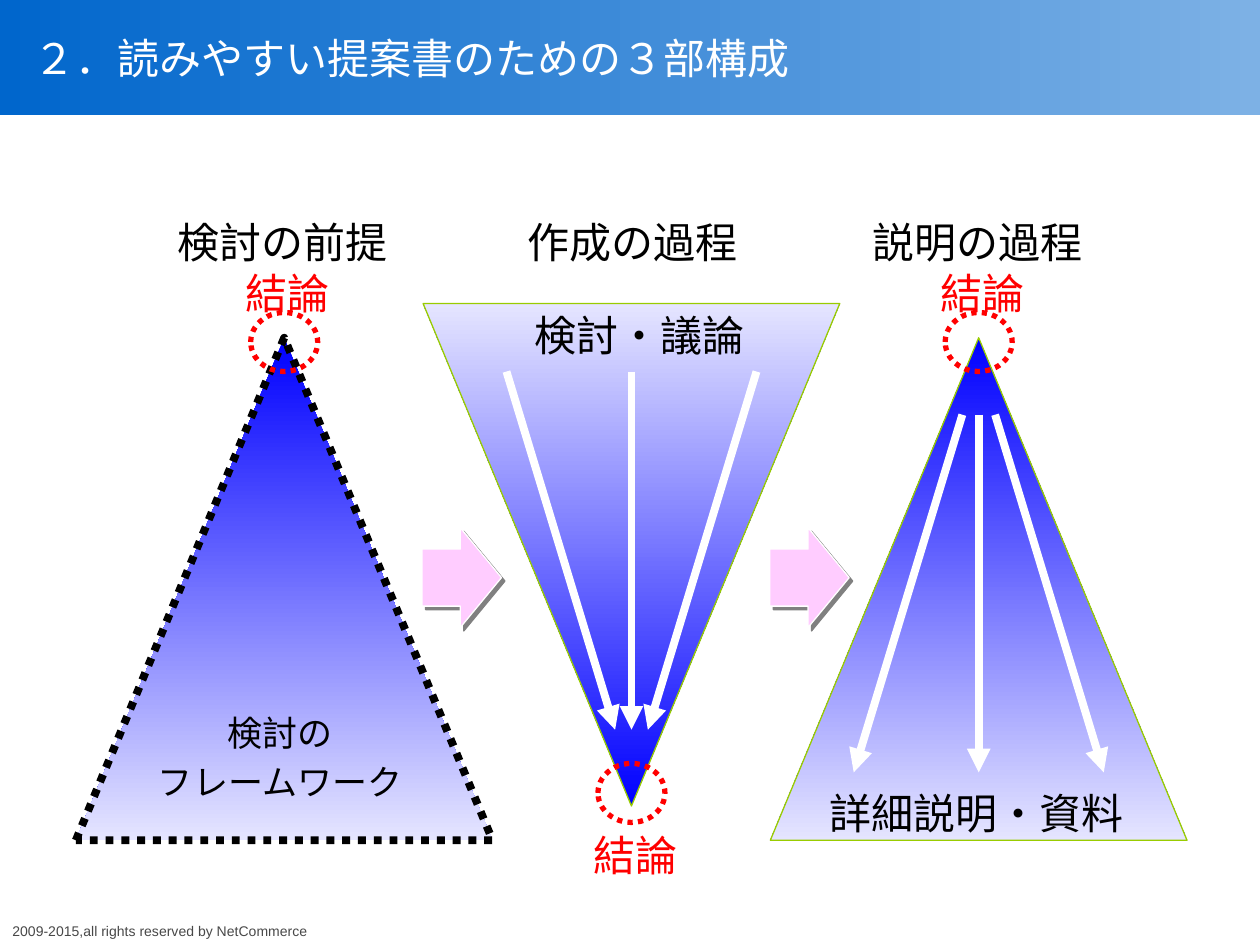
from lxml import etree
from pptx import Presentation
from pptx.dml.color import RGBColor
from pptx.enum import dml, shapes, text
from pptx.oxml import ns
from pptx.util import Cm, Pt

LABEL_FONT = "TeX Gyre Adventor"
CENTRES = (5.73, 12.73, 19.73)
TRIANGLE_WIDTH, TRIANGLE_HEIGHT = 8.4, 10.13
CIRCLE_WIDTH, CIRCLE_HEIGHT = 1.35, 1.19
LABEL_HEIGHT = 1.27


def color(value):
    return RGBColor.from_string(value)


def add_xml(parent, tag, **attributes):
    element = etree.SubElement(parent, ns.qn(tag))
    for name, value in attributes.items():
        element.set(name, str(value))
    return element


def set_line(shape, value, width, dash=None):
    shape.line.color.rgb = color(value)
    shape.line.width = Pt(width)
    if dash:
        shape.line.dash_style = dash


def set_gradient(shape, start, end, angle):
    shape.fill.gradient()
    shape.fill.gradient_angle = angle
    for stop, value in zip(shape.fill.gradient_stops, (start, end)):
        stop.color.rgb = color(value)


def format_font(paragraph, name, size, value):
    formats = {"name": name, "size": Pt(size)}
    for key, setting in formats.items():
        setattr(paragraph.font, key, setting)
    paragraph.font.color.rgb = color(value)


def add_preset(parent, kind, left, top, width, height):
    shape = parent.shapes.add_shape(kind, Cm(left), Cm(top), Cm(width), Cm(height))
    shape.shadow.inherit = False
    return shape


def add_label(parent, lines, left, top, width, height=LABEL_HEIGHT, value="000000",
              size=24, font=LABEL_FONT, align=text.PP_ALIGN.CENTER):
    box = parent.shapes.add_textbox(Cm(left), Cm(top), Cm(width), Cm(height))
    frame = box.text_frame
    frame.word_wrap = False
    frame.auto_size = text.MSO_AUTO_SIZE.SHAPE_TO_FIT_TEXT
    frame.text = "\n".join(lines)
    for index, paragraph in enumerate(frame.paragraphs):
        paragraph.alignment = align
        if index:
            paragraph.space_before = Pt(size * 0.2)
        format_font(paragraph, font, size, value)


def add_triangle(parent, centre, top, inverted=False, outlined=False):
    triangle = add_preset(parent, shapes.MSO_SHAPE.ISOSCELES_TRIANGLE,
                          centre - TRIANGLE_WIDTH / 2, top, TRIANGLE_WIDTH, TRIANGLE_HEIGHT)
    set_gradient(triangle, "0000FF", "E5E5FF", 270)
    if inverted:
        triangle._element.spPr.find(ns.qn("a:xfrm")).set("flipV", "1")
    if outlined:
        set_line(triangle, "000000", 4.5, dml.MSO_LINE.ROUND_DOT)
    else:
        set_line(triangle, "99CC00", 0.75)


def add_conclusion(parent, centre, circle_top, label_top):
    circle = add_preset(parent, shapes.MSO_SHAPE.OVAL, centre - CIRCLE_WIDTH / 2,
                        circle_top, CIRCLE_WIDTH, CIRCLE_HEIGHT)
    circle.fill.background()
    set_line(circle, "FF0000", 3, dml.MSO_LINE.ROUND_DOT)
    add_label(parent, ["結論"], centre - 1.03, label_top, 2.21, value="FF0000")


def add_arrow_fan(parent, centre, top, bottom, top_spread, bottom_spread):
    for side in (0, -1, 1):
        arrow = parent.shapes.add_connector(
            shapes.MSO_CONNECTOR.STRAIGHT,
            Cm(centre + side * top_spread), Cm(top),
            Cm(centre + side * bottom_spread), Cm(bottom))
        set_line(arrow, "FFFFFF", 4.5)
        add_xml(arrow.line._get_or_add_ln(), "a:tailEnd", type="triangle")
        add_xml(arrow._element.spPr, "a:effectLst")


def add_step_arrow(parent, left):
    arrow = add_preset(parent, shapes.MSO_SHAPE.RIGHT_ARROW, left, 10.64, 1.6, 2.01)
    arrow.adjustments[0] = 0.573
    arrow.adjustments[1] = 0.518
    arrow.fill.solid()
    arrow.fill.fore_color.rgb = color("FFCCFF")
    set_line(arrow, "FFFFFF", 0.75)
    effects = arrow._element.spPr.find(ns.qn("a:effectLst"))
    shadow = add_xml(effects, "a:outerShdw", dist=Pt(2.8), dir=45 * 60000,
                     algn="ctr", rotWithShape=0)
    add_xml(shadow, "a:srgbClr", val="808080")


def add_header(slide):
    band = add_preset(slide, shapes.MSO_SHAPE.RECTANGLE, 0, 0, 25.4, 2.33)
    set_gradient(band, "0066CC", "7DB1E5", 0)
    band.line.fill.background()
    slide.shapes._spTree.insert(2, band._element)

    title = slide.shapes.title
    bounds = {"left": 0.43, "top": 0.43, "width": 22.86, "height": 1.48}
    for name, value in bounds.items():
        setattr(title, name, Cm(value))
    title.text_frame.text = "２．読みやすい提案書のための３部構成"
    title.text_frame.vertical_anchor = text.MSO_ANCHOR.MIDDLE
    title.text_frame.auto_size = text.MSO_AUTO_SIZE.NONE
    paragraph = title.text_frame.paragraphs[0]
    paragraph.alignment = text.PP_ALIGN.LEFT
    format_font(paragraph, "Arial", 24, "FFFFFF")


def add_premise(slide, centre):
    group = slide.shapes.add_group_shape()
    add_triangle(group, centre, 6.81, outlined=True)
    add_conclusion(group, centre, 6.3, 5.26)
    add_label(group, ["検討の前提"], centre - 2.4, 4.24, 4.75)
    add_label(group, ["検討の", "フレームワーク"], 2.92, 14.22, 5.46, 1.96, size=20)


def add_creation(slide, centre):
    group = slide.shapes.add_group_shape()
    add_triangle(group, centre, 6.12, inverted=True)
    add_conclusion(group, centre, 15.39, 16.59)
    add_label(group, ["作成の過程"], centre - 2.35, 4.24, 4.75)
    add_label(group, ["検討・議論"], centre - 2.21, 6.12, 4.75)
    add_arrow_fan(group, centre, 7.49, 14.71, 2.52, 0.33)
    add_step_arrow(group, 8.51)


def add_explanation(slide, centre):
    group = slide.shapes.add_group_shape()
    add_triangle(group, centre, 6.81)
    add_conclusion(group, centre, 6.3, 5.26)
    add_label(group, ["説明の過程"], centre - 2.4, 4.24, 4.75)
    add_arrow_fan(group, centre, 8.36, 15.57, 0.33, 2.52)
    add_label(group, ["詳細説明・資料"], centre - 3.25, 15.75, 6.43)
    add_step_arrow(group, 15.52)


def main():
    presentation = Presentation()
    presentation.slide_width = Cm(25.4)
    presentation.slide_height = Cm(19.05)
    slide = presentation.slides.add_slide(presentation.slide_layouts[5])
    add_header(slide)
    add_label(slide, ["2009-2015,all rights reserved by NetCommerce"], 0, 18.47, 6.53, 0.61,
              value="484848", size=8, font="Arial", align=text.PP_ALIGN.LEFT)
    for add_part, centre in zip((add_premise, add_creation, add_explanation), CENTRES):
        add_part(slide, centre)
    presentation.save("out.pptx")


if __name__ == "__main__":
    main()
